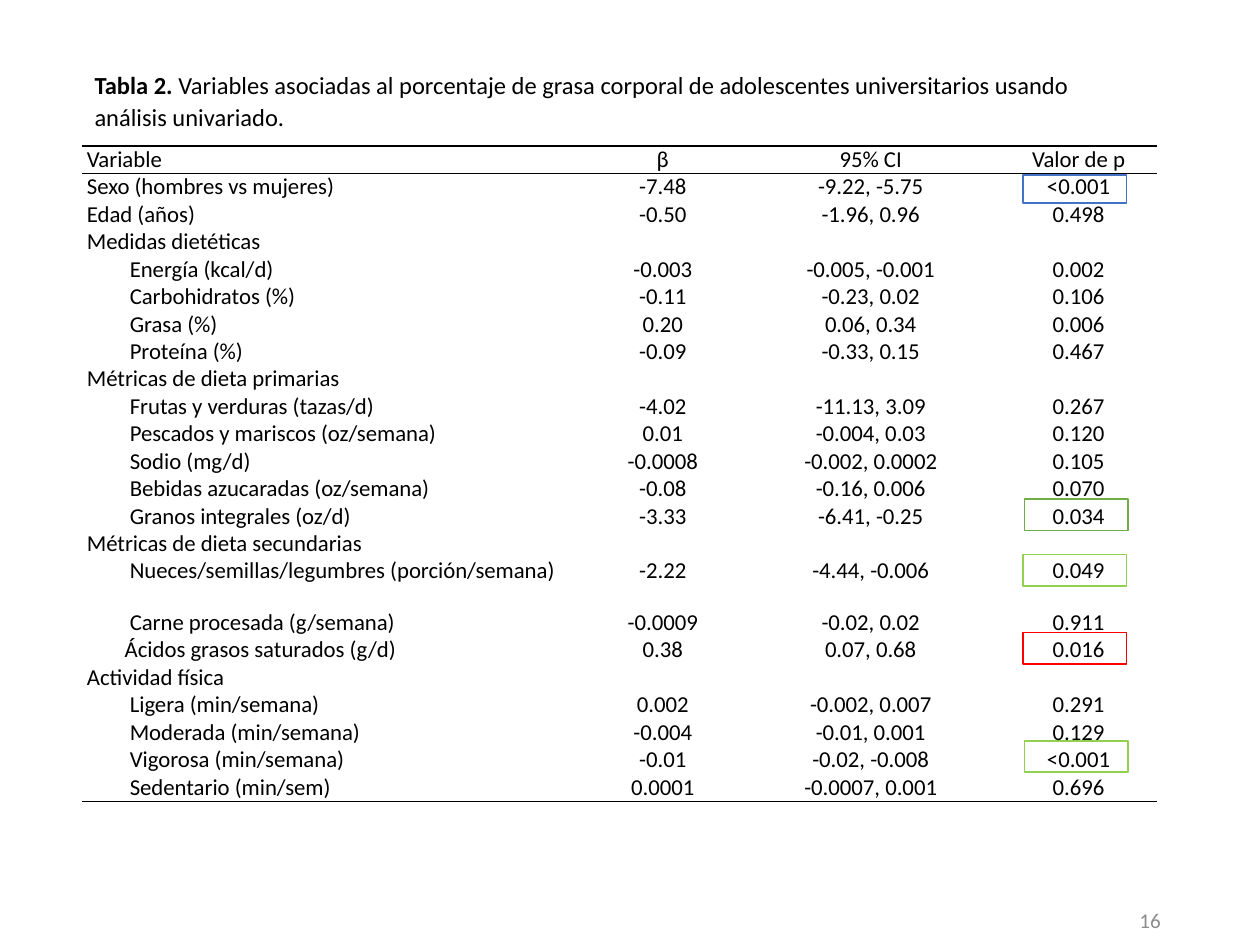
from dataclasses import dataclass

from lxml import etree
from pptx import Presentation
from pptx.dml.color import RGBColor
from pptx.enum.shapes import MSO_SHAPE
from pptx.enum.text import MSO_ANCHOR, MSO_AUTO_SIZE, PP_ALIGN
from pptx.oxml.ns import qn
from pptx.util import Inches, Pt

CENTER, JUSTIFY, LEFT, RIGHT = PP_ALIGN.CENTER, PP_ALIGN.JUSTIFY, PP_ALIGN.LEFT, PP_ALIGN.RIGHT
TOP, MIDDLE = MSO_ANCHOR.TOP, MSO_ANCHOR.MIDDLE
NO_AUTOFIT = MSO_AUTO_SIZE.NONE
RECTANGLE = MSO_SHAPE.RECTANGLE

FONT = "Calibri"
BLACK, WHITE, GRAY = "000000", "FFFFFF", "8C8C8C"
PLAIN_TABLE_STYLE = "{2D5ABB26-0587-4C30-8999-92F81FD0307C}"
COLUMN_WIDTHS = (3.99, 1.24, 2.06, 1.24)
ROW_HEIGHT, TALL_ROW_HEIGHT = 0.19, 0.41
ROW_LINE_POINTS = 15.65
ITEM_INDENT = 0.34


@dataclass(frozen=True)
class Row:
    label: str
    values: tuple[str, ...] = ()
    indent: float = ITEM_INDENT
    height: float = ROW_HEIGHT


@dataclass(frozen=True)
class Highlight:
    left: float
    top: float
    color: str
    height: float = 0.25


ROWS = (
    Row("Variable", ("β", "95% CI", "Valor de p"), indent=0),
    Row("Sexo (hombres vs mujeres)", ("-7.48", "-9.22, -5.75", "<0.001"), indent=0),
    Row("Edad (años)", ("-0.50", "-1.96, 0.96", "0.498"), indent=0),
    Row("Medidas dietéticas", indent=0),
    Row("Energía (kcal/d)", ("-0.003", "-0.005, -0.001", "0.002")),
    Row("Carbohidratos (%)", ("-0.11", "-0.23, 0.02", "0.106")),
    Row("Grasa (%)", ("0.20", "0.06, 0.34", "0.006")),
    Row("Proteína (%)", ("-0.09", "-0.33, 0.15", "0.467")),
    Row("Métricas de dieta primarias", indent=0),
    Row("Frutas y verduras (tazas/d)", ("-4.02", "-11.13, 3.09", "0.267")),
    Row("Pescados y mariscos (oz/semana)", ("0.01", "-0.004, 0.03", "0.120")),
    Row("Sodio (mg/d)", ("-0.0008", "-0.002, 0.0002", "0.105")),
    Row("Bebidas azucaradas (oz/semana)", ("-0.08", "-0.16, 0.006", "0.070")),
    Row("Granos integrales (oz/d)", ("-3.33", "-6.41, -0.25", "0.034")),
    Row("Métricas de dieta secundarias", indent=0),
    Row("Nueces/semillas/legumbres (porción/semana)", ("-2.22", "-4.44, -0.006", "0.049"),
        height=TALL_ROW_HEIGHT),
    Row("Carne procesada (g/semana)", ("-0.0009", "-0.02, 0.02", "0.911")),
    Row("Ácidos grasos saturados (g/d)", ("0.38", "0.07, 0.68", "0.016"), indent=0.3),
    Row("Actividad física", indent=0),
    Row("Ligera (min/semana)", ("0.002", "-0.002, 0.007", "0.291")),
    Row("Moderada (min/semana)", ("-0.004", "-0.01, 0.001", "0.129")),
    Row("Vigorosa (min/semana)", ("-0.01", "-0.02, -0.008", "<0.001")),
    Row("Sedentario (min/sem)", ("0.0001", "-0.0007, 0.001", "0.696")),
)

HIGHLIGHTS = (
    Highlight(8.13, 5.88, "92D050"),
    Highlight(8.12, 5.02, "FF0000"),
    Highlight(8.12, 4.4, "92D050"),
    Highlight(8.13, 3.96, "70AD47"),
    Highlight(8.12, 1.39, "4472C4", height=0.22),
)


def rgb(color: str) -> RGBColor:
    return RGBColor.from_string(color)


def add_span(para, text: str, size: float, color: str = BLACK, bold: bool = False) -> None:
    span = para.add_run()
    span.text = text
    span.font.name, span.font.size, span.font.bold = FONT, Pt(size), bold
    span.font.color.rgb = rgb(color)


def place(box, left: float, top: float, width: float, height: float) -> None:
    box.left, box.top, box.width, box.height = map(Inches, (left, top, width, height))


def fill_caption(box) -> None:
    place(box, 0.65, 0.49, 8.36, 0.59)
    frame = box.text_frame
    frame.word_wrap, frame.auto_size, frame.vertical_anchor = True, NO_AUTOFIT, TOP
    para = frame.paragraphs[0]
    para.alignment, para.line_spacing, para.space_before = LEFT, 1.07, Pt(0)
    para.space_after = Pt(8)
    add_span(para, "Tabla 2.", 14, bold=True)
    add_span(para, " Variables asociadas al porcentaje de grasa corporal de adolescentes "
                   "universitarios usando análisis univariado.", 14)


def add_highlight(page, highlight: Highlight) -> None:
    box = page.shapes.add_shape(RECTANGLE, 0, 0, 0, 0)
    place(box, highlight.left, highlight.top, 0.82, highlight.height)
    box.shadow.inherit = False
    box.fill.solid()
    box.fill.fore_color.rgb = rgb(WHITE)
    box.line.color.rgb = rgb(highlight.color)
    box.line.width = Pt(1)


def set_rules(cell, above: bool, below: bool) -> None:
    """Rule the cell above and below in black, or state that there is no rule."""
    properties = cell._tc.get_or_add_tcPr()
    for position, (side, ruled) in enumerate((("lnT", above), ("lnB", below))):
        line = etree.Element(qn(f"a:{side}"), w=str(Pt(1)))
        if ruled:
            fill = etree.SubElement(line, qn("a:solidFill"))
            etree.SubElement(fill, qn("a:srgbClr"), val=BLACK)
        else:
            etree.SubElement(line, qn("a:noFill"))
        properties.insert(position, line)


def fill_cell(cell, text: str, alignment: PP_ALIGN, indent: float = 0) -> None:
    cell.margin_left = cell.margin_right = Inches(0.04)
    cell.margin_top = cell.margin_bottom = 0
    cell.fill.background()
    para = cell.text_frame.paragraphs[0]
    para.alignment, para.space_after = alignment, Pt(8)
    para.line_spacing = Pt(ROW_LINE_POINTS)
    if indent:
        properties = para._p.get_or_add_pPr()
        properties.set("marL", str(Inches(indent)))
        properties.set("indent", "0")
    add_span(para, text, 13)


def add_results_table(page) -> None:
    height = sum(row.height for row in ROWS)
    holder = page.shapes.add_table(len(ROWS), len(COLUMN_WIDTHS), Inches(0.65), Inches(1.16),
                                   Inches(sum(COLUMN_WIDTHS)), Inches(height))
    for style in holder.element.iter(qn("a:tableStyleId")):
        style.text = PLAIN_TABLE_STYLE
    table = holder.table
    table.first_row = table.horz_banding = False
    for column, width in zip(table.columns, COLUMN_WIDTHS):
        column.width = Inches(width)

    last = len(ROWS) - 1
    for index, row in enumerate(ROWS):
        table.rows[index].height = Inches(row.height)
        label = table.cell(index, 0)
        fill_cell(label, row.label, LEFT if row.indent else JUSTIFY, row.indent)
        if not row.values:
            label.merge(table.cell(index, len(COLUMN_WIDTHS) - 1))
        for column, value in enumerate(row.values, start=1):
            fill_cell(table.cell(index, column), value, CENTER)
        for cell in table.rows[index].cells:
            set_rules(cell, above=index in (0, 1), below=index in (0, last))


def add_page_number(page) -> None:
    box = page.shapes.add_textbox(0, 0, 0, 0)
    place(box, 7.06, 7.1, 2.25, 0.4)
    box.text_frame.word_wrap = True
    box.text_frame.vertical_anchor = MIDDLE
    para = box.text_frame.paragraphs[0]
    para.alignment = RIGHT
    add_span(para, "16", 12, GRAY)


def main() -> None:
    deck = Presentation()
    deck.slide_width, deck.slide_height = Inches(10), Inches(7.5)
    page = deck.slides.add_slide(deck.slide_layouts.get_by_name("Title Only"))
    fill_caption(page.shapes.title)
    for highlight in HIGHLIGHTS:
        add_highlight(page, highlight)
    add_results_table(page)
    add_page_number(page)
    deck.save("out.pptx")


if __name__ == "__main__":
    main()
